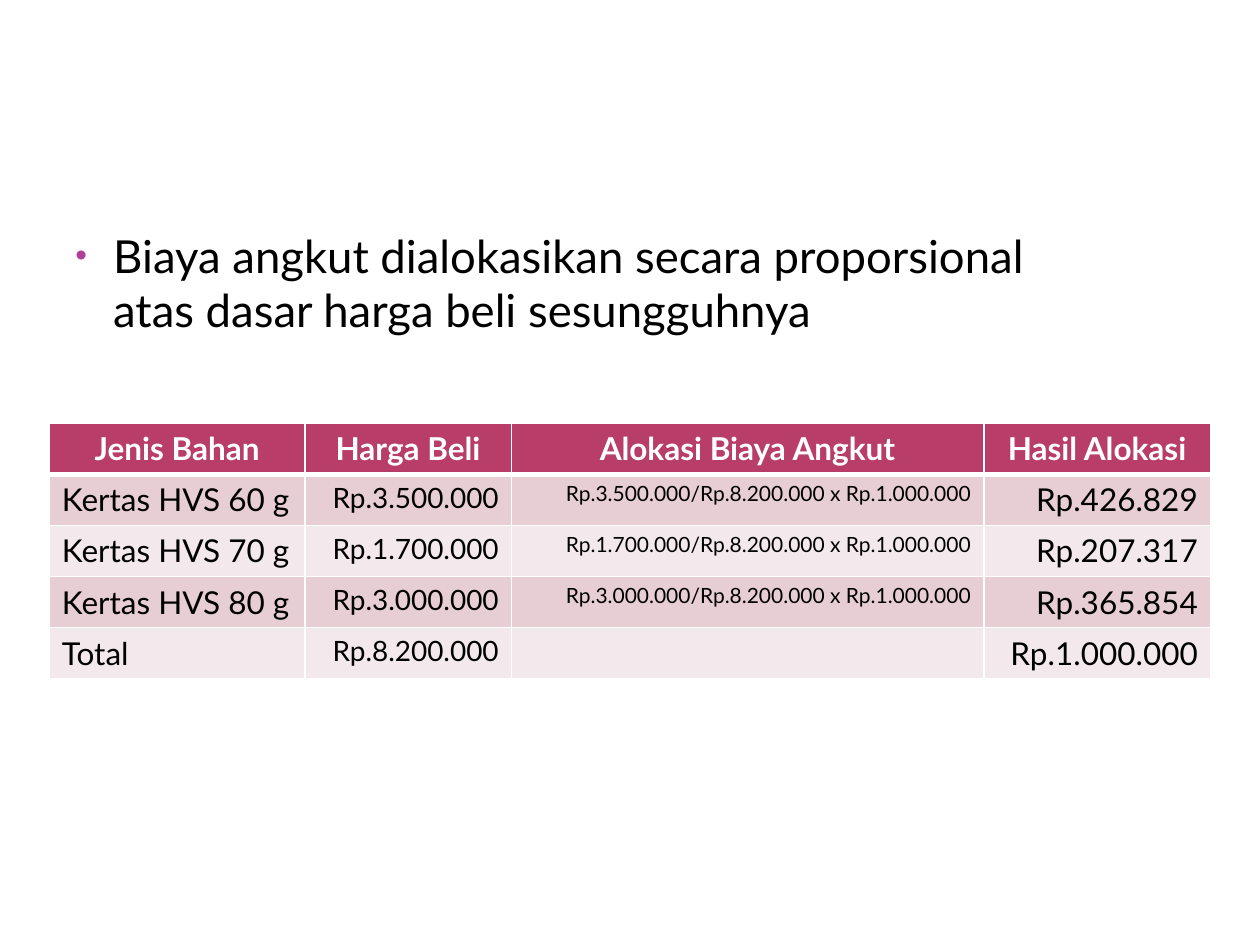
from dataclasses import dataclass

from lxml.etree import SubElement
from pptx import Presentation
from pptx.dml.color import RGBColor
from pptx.enum.text import PP_ALIGN
from pptx.oxml.ns import qn
from pptx.util import Pt

FONT = "Lato"
COLORS = {
    "text": "000000",
    "white": "FFFFFF",
    "bullet": "B13F9A",
    "header": "B83D68",
    "odd": "E6CED4",
    "even": "F3E8EB",
}


@dataclass
class Column:
    title: str
    width: float
    size: int
    align: PP_ALIGN


COLUMNS = [
    Column("Jenis Bahan", 146, 18, PP_ALIGN.LEFT),
    Column("Harga Beli", 118, 16, PP_ALIGN.RIGHT),
    Column("Alokasi Biaya Angkut", 270, 12, PP_ALIGN.RIGHT),
    Column("Hasil Alokasi", 129.5, 18, PP_ALIGN.RIGHT),
]
ROW_HEIGHT = 29.2
TOTAL_PRICE = "Rp.8.200.000"
FREIGHT = "Rp.1.000.000"
MATERIALS = [
    ("Kertas HVS 60 g", "Rp.3.500.000", "Rp.426.829"),
    ("Kertas HVS 70 g", "Rp.1.700.000", "Rp.207.317"),
    ("Kertas HVS 80 g", "Rp.3.000.000", "Rp.365.854"),
]


def rgb(name: str) -> RGBColor:
    return RGBColor.from_string(COLORS[name])


def format_runs(p, size: float, color: str, bold: bool = False) -> None:
    for r in p.runs:
        r.font.name = FONT
        r.font.size = Pt(size)
        r.font.bold = bold
        r.font.color.rgb = rgb(color)


def add_bullet(p, indent: float) -> None:
    """Give the paragraph a hanging, coloured bullet."""
    pPr = p._p.get_or_add_pPr()
    pPr.set("marL", str(Pt(indent)))
    pPr.set("indent", str(-Pt(indent)))
    color = SubElement(pPr, qn("a:buClr"))
    SubElement(color, qn("a:srgbClr"), val=COLORS["bullet"])
    SubElement(pPr, qn("a:buSzPct"), val="73000")
    SubElement(pPr, qn("a:buFont"), typeface="Arial")
    SubElement(pPr, qn("a:buChar"), char="•")


def add_borders(cell, top: float, bottom: float) -> None:
    """Draw white cell borders; call before the cell is filled."""
    tcPr = cell._tc.get_or_add_tcPr()
    for side, width in (("L", 1), ("R", 1), ("T", top), ("B", bottom)):
        ln = SubElement(tcPr, qn(f"a:ln{side}"), w=str(Pt(width)))
        fill = SubElement(ln, qn("a:solidFill"))
        SubElement(fill, qn("a:srgbClr"), val=COLORS["white"])


def add_statement(slide, text: str) -> None:
    tf = slide.shapes.add_textbox(Pt(36), Pt(126.7), Pt(570), Pt(381.6)).text_frame
    tf.word_wrap = True
    p = tf.paragraphs[0]
    p.text = text
    add_bullet(p, 21.6)
    format_runs(p, 26, "text")


def add_allocation_table(slide, rows: list[tuple[str, ...]]) -> None:
    width = sum(col.width for col in COLUMNS)
    table = slide.shapes.add_table(
        len(rows), len(COLUMNS), Pt(28.2), Pt(241.9), Pt(width), Pt(ROW_HEIGHT * len(rows))
    ).table
    for i, col in enumerate(COLUMNS):
        table.columns[i].width = Pt(col.width)
    for i, row in enumerate(rows):
        table.rows[i].height = Pt(ROW_HEIGHT)
        header = i == 0
        fill = "header" if header else "odd" if i % 2 else "even"
        for j, (col, text) in enumerate(zip(COLUMNS, row)):
            cell = table.cell(i, j)
            add_borders(cell, top=3 if i == 1 else 1, bottom=3 if header else 1)
            cell.fill.solid()
            cell.fill.fore_color.rgb = rgb(fill)
            p = cell.text_frame.paragraphs[0]
            p.text = text
            p.alignment = PP_ALIGN.CENTER if header else col.align
            format_runs(p, 18 if header else col.size, "white" if header else "text", header)


def main() -> None:
    prs = Presentation()
    prs.slide_width, prs.slide_height = Pt(720), Pt(540)
    slide = prs.slides.add_slide(prs.slide_layouts[6])
    add_statement(
        slide,
        "Biaya angkut dialokasikan secara proporsional atas dasar harga beli sesungguhnya",
    )
    rows = [tuple(col.title for col in COLUMNS)]
    for name, price, share in MATERIALS:
        rows.append((name, price, f"{price}/{TOTAL_PRICE} x {FREIGHT}", share))
    rows.append(("Total", TOTAL_PRICE, "", FREIGHT))
    add_allocation_table(slide, rows)
    prs.save("out.pptx")


if __name__ == "__main__":
    main()
